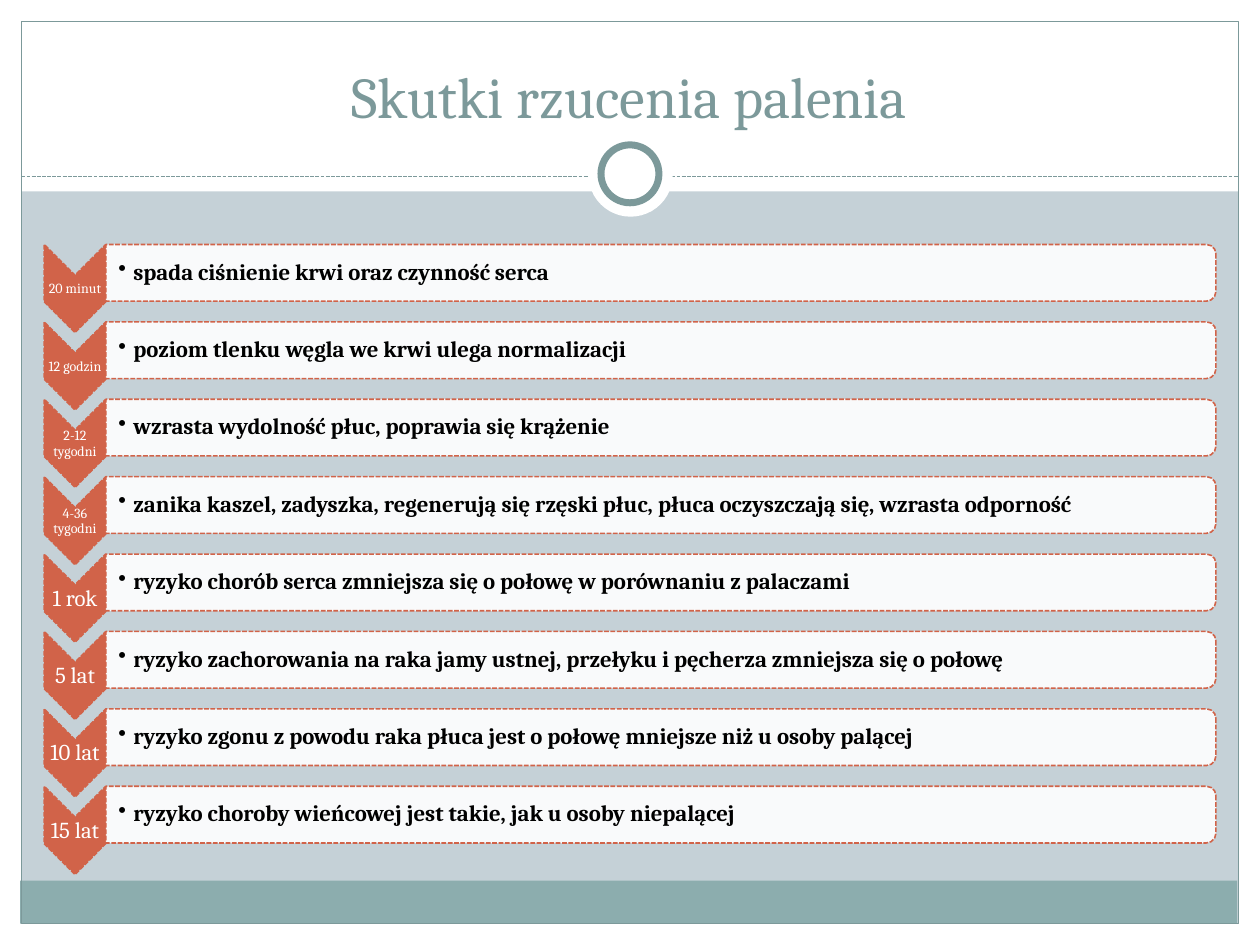
from lxml import etree
from pptx import Presentation
from pptx.dml.color import RGBColor
from pptx.enum.dml import MSO_LINE
from pptx.enum.shapes import MSO_CONNECTOR, MSO_SHAPE
from pptx.enum.text import MSO_ANCHOR, PP_ALIGN
from pptx.oxml.ns import qn
from pptx.util import Inches, Pt

RECT, OVAL = MSO_SHAPE.RECTANGLE, MSO_SHAPE.OVAL
CHEVRON, BAR = MSO_SHAPE.CHEVRON, MSO_SHAPE.ROUND_2_SAME_RECTANGLE
DASH = MSO_LINE.SQUARE_DOT  # written as sysDash below
MIDDLE, BOTTOM = MSO_ANCHOR.MIDDLE, MSO_ANCHOR.BOTTOM
LEFT, CENTER = PP_ALIGN.LEFT, PP_ALIGN.CENTER

FONT = "Cambria"
WHITE, BLACK, TEAL, ORANGE = "FFFFFF", "000000", "7C999A", "D16349"
BACKGROUND, FOOTER = "C5D1D7", "8CADAE"

TITLE = "Skutki rzucenia palenia"
# time after quitting, label size, effect
STAGES = [
    ("20 minut", 8, "spada ciśnienie krwi oraz czynność serca"),
    ("12 godzin", 8, "poziom tlenku węgla we krwi ulega normalizacji"),
    ("2-12 tygodni", 8, "wzrasta wydolność płuc, poprawia się krążenie"),
    ("4-36 tygodni", 8, "zanika kaszel, zadyszka, regenerują się rzęski płuc, "
                        "płuca oczyszczają się, wzrasta odporność"),
    ("1 rok", 13, "ryzyko chorób serca zmniejsza się o połowę w porównaniu z palaczami"),
    ("5 lat", 13, "ryzyko zachorowania na raka jamy ustnej, przełyku i pęcherza "
                  "zmniejsza się o połowę"),
    ("10 lat", 13, "ryzyko zgonu z powodu raka płuca jest o połowę mniejsze niż u osoby palącej"),
    ("15 lat", 13, "ryzyko choroby wieńcowej jest takie, jak u osoby niepalącej"),
]
FRAME_SHAPES = [  # left, top, width, height, fill
    (0, 7.33, 10, 0.17, WHITE),
    (0, 0, 10, 1.52, WHITE),
    (0, 0, 0.17, 7.5, WHITE),
    (9.83, 0, 0.17, 7.5, WHITE),
    (0.16, 6.99, 9.66, 0.34, FOOTER),
]
FIRST_TOP, LAST_TOP = 1.94, 6.24
PITCH = (LAST_TOP - FIRST_TOP) / (len(STAGES) - 1)
STAGE_LEFT, STAGE_W, STAGE_H = 0.35, 0.49, 0.7
BAR_LEFT, BAR_W, BAR_H = STAGE_LEFT + STAGE_W, 8.81, 0.45


def rgb(color):
    return RGBColor.from_string(color)


def set_line(line, color, width, dashed=False):
    line.color.rgb = rgb(color)
    line.width = Pt(width)
    if dashed:
        line.dash_style = DASH
        line._ln.find(qn("a:prstDash")).set("val", "sysDash")


def add_shape(s, kind, x, y, w, h, fill=None, line=None):
    sp = s.shapes.add_shape(kind, Inches(x), Inches(y), Inches(w), Inches(h))
    sp.shadow.inherit = False
    if fill:
        sp.fill.solid()
        sp.fill.fore_color.rgb = rgb(fill)
    else:
        sp.fill.background()
    if line:
        set_line(sp.line, *line)
    else:
        sp.line.fill.background()
    return sp


def add_upright(s, kind, x, y, w, h, fill):
    """Add a shape turned by 90 degrees that covers the given visible box."""
    sp = add_shape(s, kind, x + (w - h) / 2, y + (h - w) / 2, h, w, fill, (ORANGE, 0.9, True))
    sp.rotation = 90
    return sp


def add_text(s, text, x, y, w, h, size, color, align=CENTER, anchor=MIDDLE, insets=None):
    tf = s.shapes.add_textbox(Inches(x), Inches(y), Inches(w), Inches(h)).text_frame
    tf.word_wrap = True
    tf.vertical_anchor = anchor
    if insets:
        tf.margin_left, tf.margin_top, tf.margin_right, tf.margin_bottom = map(Inches, insets)
    p = tf.paragraphs[0]
    p.text = text
    p.alignment = align
    p.font.name, p.font.size, p.font.color.rgb = FONT, Pt(size), rgb(color)
    return p


def add_bullet(p, indent):
    pPr = p._p.get_or_add_pPr()
    pPr.set("marL", str(Inches(indent)))
    pPr.set("indent", str(-Inches(indent)))
    bullet = etree.Element(qn("a:buChar"), char="•")
    pPr.find(qn("a:defRPr")).addprevious(bullet)


prs = Presentation()
prs.slide_width, prs.slide_height = Inches(10), Inches(7.5)
s = prs.slides.add_slide(prs.slide_layouts[6])
s.background.fill.solid()
s.background.fill.fore_color.rgb = rgb(BACKGROUND)

# Frame, divider and ring
for x, y, w, h, fill in FRAME_SHAPES:
    add_shape(s, RECT, x, y, w, h, fill)
add_shape(s, RECT, 0.17, 0.17, 9.66, 7.16, line=(TEAL, 0.75))
divider = s.shapes.add_connector(
    MSO_CONNECTOR.STRAIGHT, Inches(0.17), Inches(1.4), Inches(9.83), Inches(1.4))
set_line(divider.line, TEAL, 0.75, True)
etree.SubElement(divider._element.spPr, qn("a:effectLst"))
add_shape(s, OVAL, 4.67, 1.05, 0.67, 0.67, WHITE)
add_shape(s, OVAL, 4.77, 1.15, 0.46, 0.46, WHITE, (TEAL, 4))

# Title
add_text(s, TITLE, 0.33, 0.25, 9.33, 0.83, 33, TEAL, anchor=BOTTOM)

# Timeline: a chevron and an effect bar per stage
for i, (label, size, effect) in enumerate(STAGES):
    top = FIRST_TOP + i * PITCH
    add_upright(s, CHEVRON, STAGE_LEFT, top, STAGE_W, STAGE_H, ORANGE)
    p = add_text(s, label, STAGE_LEFT, top + 0.25, STAGE_W, 0.21, size, WHITE, insets=[0.01] * 4)
    p.line_spacing = 0.9

    bar = add_upright(s, BAR, BAR_LEFT, top, BAR_W, BAR_H, WHITE)
    clr = bar._element.spPr.find(qn("a:solidFill"))[0]
    etree.SubElement(clr, qn("a:alpha"), val="90000")
    p = add_text(s, effect, BAR_LEFT, top + 0.02, 8.79, 0.41, 13, BLACK, LEFT,
                 insets=[0.1, 0.01, 0.01, 0.01])
    p.line_spacing = 0.9
    p.font.bold = True
    add_bullet(p, 0.12)

prs.save("out.pptx")
